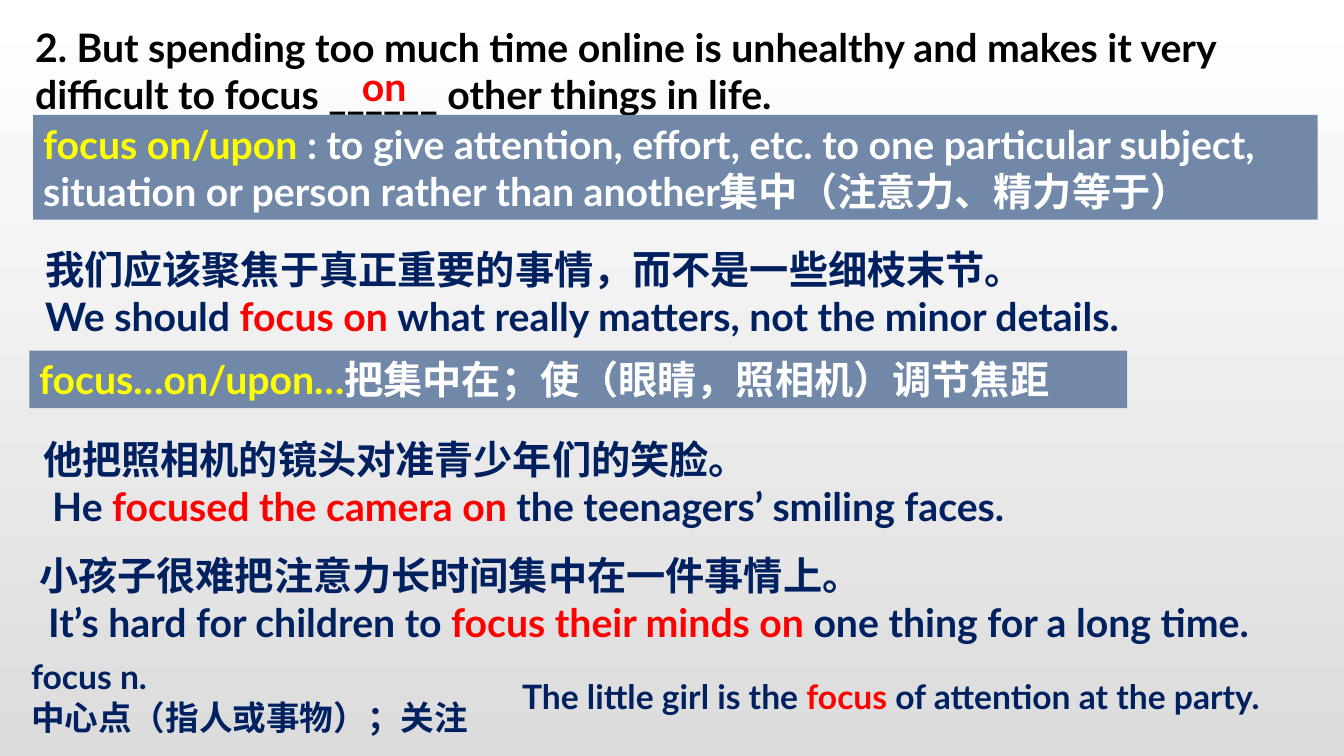
from dataclasses import dataclass

from lxml import etree
from pptx import Presentation
from pptx.dml.color import RGBColor
from pptx.enum import shapes, text
from pptx.oxml import ns
from pptx.util import Inches, Pt


@dataclass(frozen=True)
class Theme:
    ink: str = "000000"
    navy: str = "002060"
    red: str = "FF0000"
    yellow: str = "FFFF00"
    white: str = "FFFFFF"
    banner: str = "7188A8"
    shade: str = "DCDCDC"
    large: int = 28
    small: int = 24
    latin: str = "Lato"
    chinese: str = "Noto Sans CJK SC"


THEME = Theme()
WIDE = 12.74
TWO_LINES = 1.04
ONE_LINE = 0.57
SPACE = 0.09


def set_background(page):
    fill = page.background.fill
    fill.gradient()
    fill.gradient_angle = 270
    for stop, position, colour in zip(fill.gradient_stops, (0, 1), (THEME.white, THEME.shade)):
        stop.position = position
        stop.color.rgb = RGBColor.from_string(colour)


def add_span(para, words, colour, size):
    span = para.add_run()
    span.text = words
    is_chinese = any("一" <= letter <= "龥" for letter in words)
    formats = {
        "size": Pt(size),
        "bold": True,
        "name": THEME.chinese if is_chinese else THEME.latin,
    }
    for name, value in formats.items():
        setattr(span.font, name, value)
    span.font.color.rgb = RGBColor.from_string(colour)
    east_asian = etree.SubElement(span.font._element, ns.qn("a:ea"))
    east_asian.set("typeface", THEME.chinese)


def fill_text(box, lines, size, indents=()):
    frame = box.text_frame
    formats = {
        "word_wrap": True,
        "auto_size": text.MSO_AUTO_SIZE.SHAPE_TO_FIT_TEXT,
        "vertical_anchor": text.MSO_ANCHOR.TOP,
    }
    for name, value in formats.items():
        setattr(frame, name, value)
    for index, line in enumerate(lines):
        para = frame.add_paragraph() if index else frame.paragraphs[0]
        para.alignment = text.PP_ALIGN.LEFT
        if index < len(indents) and indents[index]:
            para._p.get_or_add_pPr().set("marL", str(Inches(indents[index])))
        for words, colour in line:
            add_span(para, words, colour, size)


def add_text(page, place, lines, size=THEME.large, indents=()):
    box = page.shapes.add_textbox(*map(Inches, place))
    fill_text(box, lines, size, indents)


def add_banner(page, place, phrase, meaning):
    box = page.shapes.add_shape(shapes.MSO_SHAPE.RECTANGLE, *map(Inches, place))
    box.shadow.inherit = False
    box.fill.solid()
    box.fill.fore_color.rgb = RGBColor.from_string(THEME.banner)
    box.line.fill.background()
    spans = [(phrase, THEME.yellow)] + [(words, THEME.white) for words in meaning]
    fill_text(box, [spans], THEME.large)


def add_example(page, left, top, chinese, before, phrase, after, indent=0):
    english = [(before, THEME.navy), (phrase, THEME.red), (after, THEME.navy)]
    add_text(page, (left, top, WIDE, TWO_LINES), [[(chinese, THEME.navy)], english],
             indents=(0, indent))


def main():
    deck = Presentation()
    deck.slide_width, deck.slide_height = Inches(13.33), Inches(7.5)
    page = deck.slides.add_slide(deck.slide_layouts[6])
    set_background(page)

    question = ("2. But spending too much time online is unhealthy and makes it very "
                "difficult to focus ______ other things in life.")
    add_text(page, (0.25, 0.18, WIDE, TWO_LINES), [[(question, THEME.ink)]])
    add_banner(page, (0.33, 1.14, WIDE, TWO_LINES), "focus on/upon ",
               [": to give attention, effort, etc. to one particular subject, "
                "situation or person rather than another",
                "集中（注意力、精力等于）"])
    add_text(page, (3.4, 0.57, 1.05, ONE_LINE), [[("on", THEME.red)]], indents=(SPACE,))
    add_example(page, 0.35, 2.38, "我们应该聚焦于真正重要的事情，而不是一些细枝末节。",
                "We should ", "focus on ", "what really matters, not the minor details.")
    add_banner(page, (0.29, 3.48, 10.89, ONE_LINE), "focus…on/upon…",
               ["把集中在；使（眼睛，照相机）调节焦距"])
    add_example(page, 0.33, 4.27, "他把照相机的镜头对准青少年们的笑脸。",
                "He ", "focused the camera on ", "the teenagers’ smiling faces.", SPACE)
    add_example(page, 0.29, 5.42, "小孩子很难把注意力长时间集中在一件事情上。",
                "It’s hard for children to ", "focus their minds on ",
                "one thing for a long time.", SPACE)
    add_text(page, (0.21, 6.46, 4.73, 0.91),
             [[("focus n.", THEME.navy)], [("中心点（指人或事物）；关注", THEME.navy)]],
             THEME.small)
    add_text(page, (5.08, 6.66, 8.27, 0.5),
             [[("The little girl is the ", THEME.navy), ("focus ", THEME.red),
               ("of attention at the party.", THEME.navy)]], THEME.small)

    deck.save("out.pptx")


if __name__ == "__main__":
    main()
